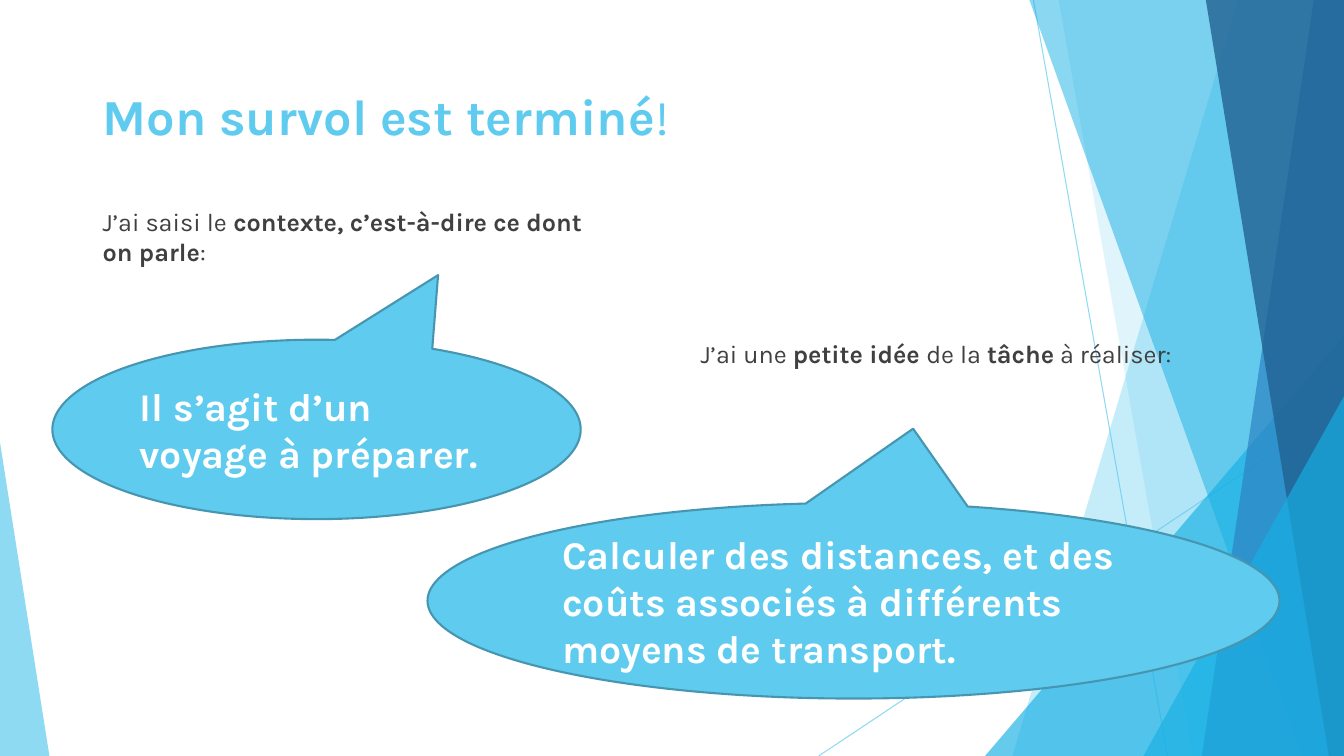
from lxml.etree import SubElement
from pptx import Presentation
from pptx.dml.color import RGBColor
from pptx.enum.shapes import MSO_CONNECTOR, MSO_SHAPE
from pptx.enum.text import MSO_ANCHOR, PP_ALIGN
from pptx.oxml.ns import qn
from pptx.util import Inches, Pt

WIDTH, HEIGHT = 13.33, 7.5
FONT = "Karla"
COLORS = {
    "sky": "5FCBEF",
    "cyan": "17B0E4",
    "blue": "2E83C3",
    "navy": "226292",
    "outline": "4696B1",
    "body": "404040",
    "white": "FFFFFF",
}


def rgb(name):
    """Return the named colour."""
    return RGBColor.from_string(COLORS[name])


def set_opacity(shape, percent):
    """Apply an opacity to every colour of a shape."""
    for color in shape._element.spPr.iter(qn("a:srgbClr")):
        SubElement(color, qn("a:alpha"), val=str(percent * 1000))


def paint_facet(shape, color, opacity):
    """Give a shape a translucent fill without outline or shadow."""
    shape.shadow.inherit = False
    shape.fill.solid()
    shape.fill.fore_color.rgb = rgb(color)
    shape.line.fill.background()
    set_opacity(shape, opacity)


def add_ray(slide, start, end):
    """Draw a thin translucent line between two points."""
    ray = slide.shapes.add_connector(
        MSO_CONNECTOR.STRAIGHT, *map(Inches, start + end))
    ray.line.color.rgb = rgb("sky")
    ray.line.width = Pt(0.75)
    SubElement(ray._element.spPr, qn("a:effectLst"))
    set_opacity(ray, 70)


def add_band(slide, top_x, bottom_x, color, opacity):
    """Fill the area from a slanted edge to the right side of the slide."""
    corners = [(WIDTH, 0), (WIDTH, HEIGHT), (bottom_x, HEIGHT)]
    builder = slide.shapes.build_freeform(Inches(top_x), 0)
    builder.add_line_segments([(Inches(x), Inches(y)) for x, y in corners])
    paint_facet(builder.convert_to_shape(), color, opacity)


def add_wedge(slide, left, top, width, apex, color, opacity):
    """Place a triangle that stands on the bottom edge of the slide."""
    wedge = slide.shapes.add_shape(
        MSO_SHAPE.ISOSCELES_TRIANGLE,
        *map(Inches, (left, top, width, HEIGHT - top)))
    wedge.adjustments[0] = apex
    paint_facet(wedge, color, opacity)


def add_backdrop(slide):
    """Layer the rays, bands and wedges along the slide edges."""
    add_ray(slide, (10.25, 0), (11.58, HEIGHT))
    add_ray(slide, (WIDTH, 4.03), (8.12, HEIGHT))
    add_band(slide, 12.28, 10.04, "sky", 36)
    add_band(slide, 10.5, 11.83, "sky", 20)
    add_wedge(slide, 9.77, 3.33, WIDTH - 9.77, 1, "cyan", 66)
    add_band(slide, 10.21, 12.91, "cyan", 50)
    add_band(slide, 13.03, 11.92, "blue", 70)
    add_band(slide, 11.96, 13.18, "navy", 80)
    add_wedge(slide, 11.34, 3.93, WIDTH - 11.34, 1, "cyan", 66)
    add_wedge(slide, 0, 4.39, 0.49, 0, "sky", 70)


def style_run(r, size, color, bold):
    """Set the font of a run."""
    r.font.name = FONT
    r.font.size = Pt(size)
    r.font.bold = bold
    r.font.color.rgb = rgb(color)


def add_text(slide, box, parts, size, color):
    """Write one paragraph from (text, bold) parts in a box."""
    tf = slide.shapes.add_textbox(*map(Inches, box)).text_frame
    tf.word_wrap = True
    p = tf.paragraphs[0]
    for text, bold in parts:
        r = p.add_run()
        r.text = text
        style_run(r, size, color, bold)


def add_callout(slide, box, tip, text):
    """Place an oval speech bubble whose tail points at tip."""
    s = slide.shapes.add_shape(MSO_SHAPE.OVAL_CALLOUT, *map(Inches, box))
    s.adjustments[0], s.adjustments[1] = tip
    s.shadow.inherit = False
    s.fill.solid()
    s.fill.fore_color.rgb = rgb("sky")
    s.line.color.rgb = rgb("outline")
    s.line.width = Pt(1.5)
    tf = s.text_frame
    tf.text = text
    tf.word_wrap = True
    tf.vertical_anchor = MSO_ANCHOR.MIDDLE
    p = tf.paragraphs[0]
    p.alignment = PP_ALIGN.LEFT
    style_run(p.runs[0], 28, "white", True)


def main():
    """Build and save the slide."""
    prs = Presentation()
    prs.slide_width, prs.slide_height = Inches(WIDTH), Inches(HEIGHT)
    slide = prs.slides.add_slide(prs.slide_layouts[6])
    add_backdrop(slide)
    add_text(slide, (0.92, 0.8, 11.5, 1.37),
             [("Mon survol est terminé", True), ("!", False)], 36, "sky")
    add_text(slide, (0.92, 2, 5.26, 2),
             [("J’ai saisi le", False),
              (" contexte, c’est-à-dire ce dont on parle", True),
              (":", False)], 18, "body")
    add_text(slide, (6.85, 3.31, 5.67, 1.07),
             [("J’ai une ", False), ("petite idée ", True),
              ("de la ", False), ("tâche", True),
              (" à réaliser:", False)], 18, "body")
    add_callout(slide, (0.52, 3.37, 5.24, 1.78), (0.23, -0.86),
                "Il s’agit d’un voyage à préparer.")
    add_callout(slide, (4.24, 4.99, 8.45, 1.94), (0.07, -0.88),
                "Calculer des distances, et des coûts associés à différents "
                "moyens de transport.")
    prs.save("out.pptx")


if __name__ == "__main__":
    main()
